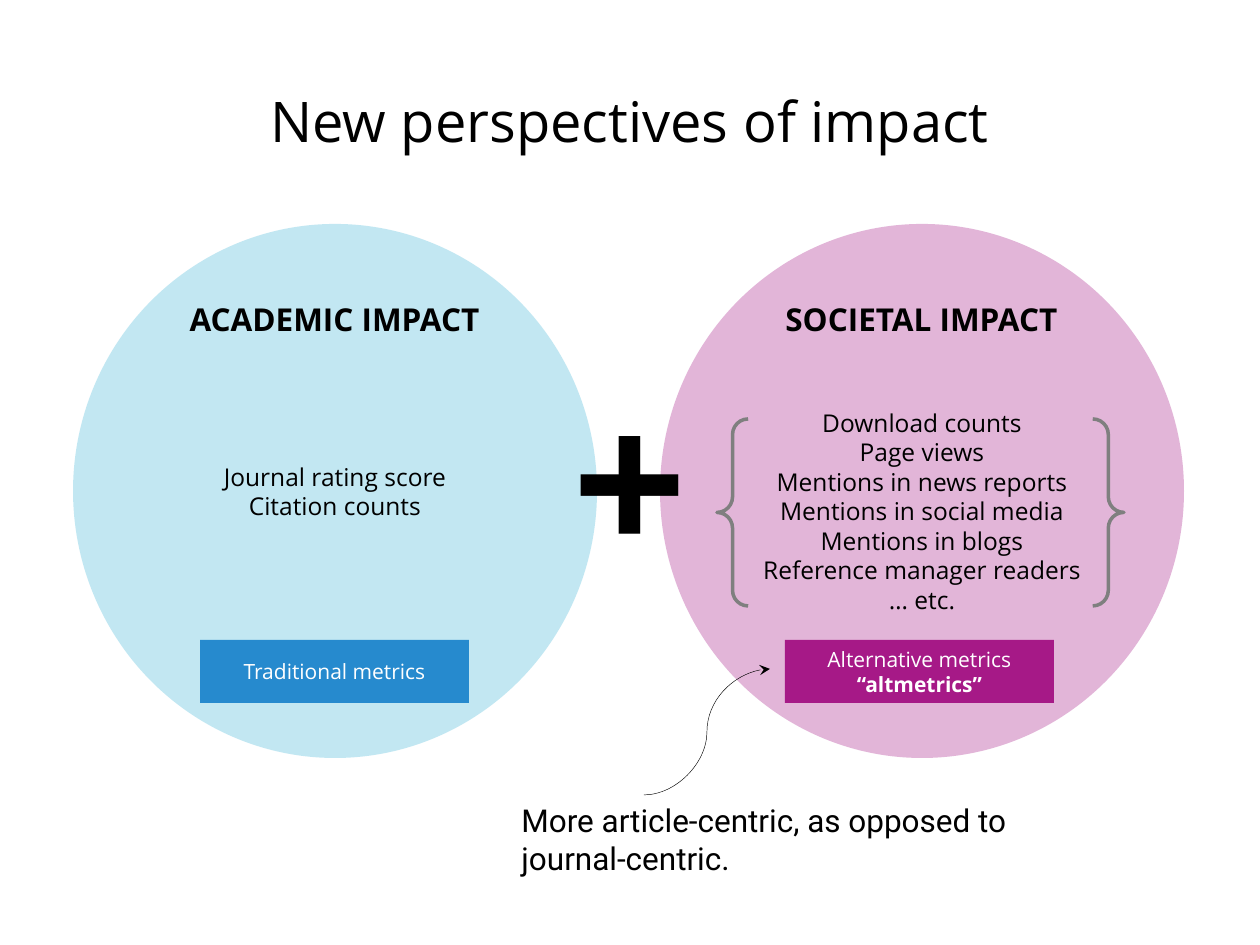
import lxml.etree
import pptx
import pptx.dml.color
import pptx.enum.shapes
import pptx.enum.text
import pptx.oxml.ns
import pptx.util

SCALE = 914400 // 126
SLIDE_SIZE = (1260, 945)
FONT = "Open Sans"
BLACK, WHITE, GREY = "000000", "FFFFFF", "7F7F7F"
OPACITY = 32

TITLE = ("New perspectives of impact", (63, 62, 1134, 117))
CIRCLES = [
    {
        "left": 660, "color": "A61987", "label_color": "A61987", "shift": 20,
        "heading": "SOCIETAL IMPACT", "heading_top": 294, "label_left": 785,
        "items": ["Download counts", "Page views", "Mentions in news reports",
                  "Mentions in social media", "Mentions in blogs",
                  "Reference manager readers", "… etc."],
        "label": ["Alternative metrics", "“altmetrics”"],
    },
    {
        "left": 73, "color": "43B7D9", "label_color": "268ACE", "shift": 0,
        "heading": "ACADEMIC IMPACT", "heading_top": 294, "label_left": 200,
        "items": ["Journal rating score", "Citation counts"],
        "label": ["Traditional metrics"],
    },
]
CIRCLE_TOP, CIRCLE_WIDTH, CIRCLE_HEIGHT = 224, 524, 534
HEADING_WIDTH, HEADING_HEIGHT = 321, 50
LABEL_TOP, LABEL_WIDTH, LABEL_HEIGHT = 640, 269, 63
BRACES = (717, 419, 407, 187)
PLUS = ("+", (559, 349, 141, 257))
NOTE = ("More article-centric, as opposed to journal-centric.", (509, 795, 522, 89))
ARROW = (644, 795, 770, 669)

SHAPES = pptx.enum.shapes.MSO_SHAPE
ALIGN = pptx.enum.text.PP_ALIGN
ANCHOR = pptx.enum.text.MSO_ANCHOR


def px(value):
    return pptx.util.Emu(value * SCALE)


def rgb(color):
    return pptx.dml.color.RGBColor.from_string(color)


def write(shape, lines, size, color=BLACK, font=FONT, bold_lines=(),
          align=ALIGN.CENTER, anchor=ANCHOR.MIDDLE, wrap=True, shift=0):
    frame = shape.text_frame
    frame.word_wrap = wrap
    frame.vertical_anchor = anchor
    if shift:
        frame.margin_top = frame.margin_top + px(2 * shift)
    for index, line in enumerate(lines):
        paragraph = frame.paragraphs[0] if index == 0 else frame.add_paragraph()
        paragraph.alignment = align
        run = paragraph.add_run()
        run.text = line
        run.font.size = pptx.util.Pt(size)
        run.font.name = font
        run.font.bold = index in bold_lines
        run.font.color.rgb = rgb(color)


def add_shape(slide, kind, box, fill=None, opacity=None):
    shape = slide.shapes.add_shape(kind, *map(px, box))
    shape.shadow.inherit = False
    shape.line.fill.background()
    if fill is None:
        shape.fill.background()
    else:
        shape.fill.solid()
        shape.fill.fore_color.rgb = rgb(fill)
    if opacity is not None:
        color = shape.fill._xPr.find(".//" + pptx.oxml.ns.qn("a:srgbClr"))
        alpha = lxml.etree.SubElement(color, pptx.oxml.ns.qn("a:alpha"))
        alpha.set("val", str(opacity * 1000))
    return shape


def add_text(slide, lines, box, size, **options):
    write(slide.shapes.add_textbox(*map(px, box)), lines, size, **options)


def add_curved_arrow(slide, points):
    kind = pptx.enum.shapes.MSO_CONNECTOR.CURVE
    arrow = slide.shapes.add_connector(kind, *map(px, points))
    arrow.line.color.rgb = rgb(BLACK)
    arrow.line.width = pptx.util.Pt(0.25)
    properties = arrow._element.spPr
    tail = lxml.etree.SubElement(arrow.line._get_or_add_ln(), pptx.oxml.ns.qn("a:tailEnd"))
    tail.set("type", "stealth")
    lxml.etree.SubElement(properties, pptx.oxml.ns.qn("a:effectLst"))


def main():
    presentation = pptx.Presentation()
    presentation.slide_width, presentation.slide_height = map(px, SLIDE_SIZE)
    slide = presentation.slides.add_slide(presentation.slide_layouts[5])

    text, box = TITLE
    title = slide.shapes.title
    title.left, title.top, title.width, title.height = map(px, box)
    write(title, [text], 32)

    for circle in CIRCLES:
        box = (circle["left"], CIRCLE_TOP, CIRCLE_WIDTH, CIRCLE_HEIGHT)
        ellipse = add_shape(slide, SHAPES.OVAL, box, circle["color"], OPACITY)
        write(ellipse, circle["items"], 14, shift=circle["shift"])

    for circle in CIRCLES:
        heading_left = circle["left"] + (CIRCLE_WIDTH - HEADING_WIDTH) // 2
        box = (heading_left, circle["heading_top"], HEADING_WIDTH, HEADING_HEIGHT)
        add_text(slide, [circle["heading"]], box, 18, bold_lines=[0],
                 anchor=ANCHOR.TOP, wrap=False)
        box = (circle["label_left"], LABEL_TOP, LABEL_WIDTH, LABEL_HEIGHT)
        label = add_shape(slide, SHAPES.RECTANGLE, box, circle["label_color"])
        write(label, circle["label"], 12, color=WHITE, bold_lines=[1])

    braces = add_shape(slide, SHAPES.DOUBLE_BRACE, BRACES)
    braces.line.color.rgb = rgb(GREY)
    braces.line.width = pptx.util.Pt(2)

    text, box = PLUS
    add_text(slide, [text], box, 115, bold_lines=[0], anchor=ANCHOR.TOP, wrap=False)
    text, box = NOTE
    add_text(slide, [text], box, 18, font="Roboto", align=ALIGN.LEFT, anchor=ANCHOR.TOP)
    add_curved_arrow(slide, ARROW)

    presentation.save("out.pptx")


if __name__ == "__main__":
    main()
